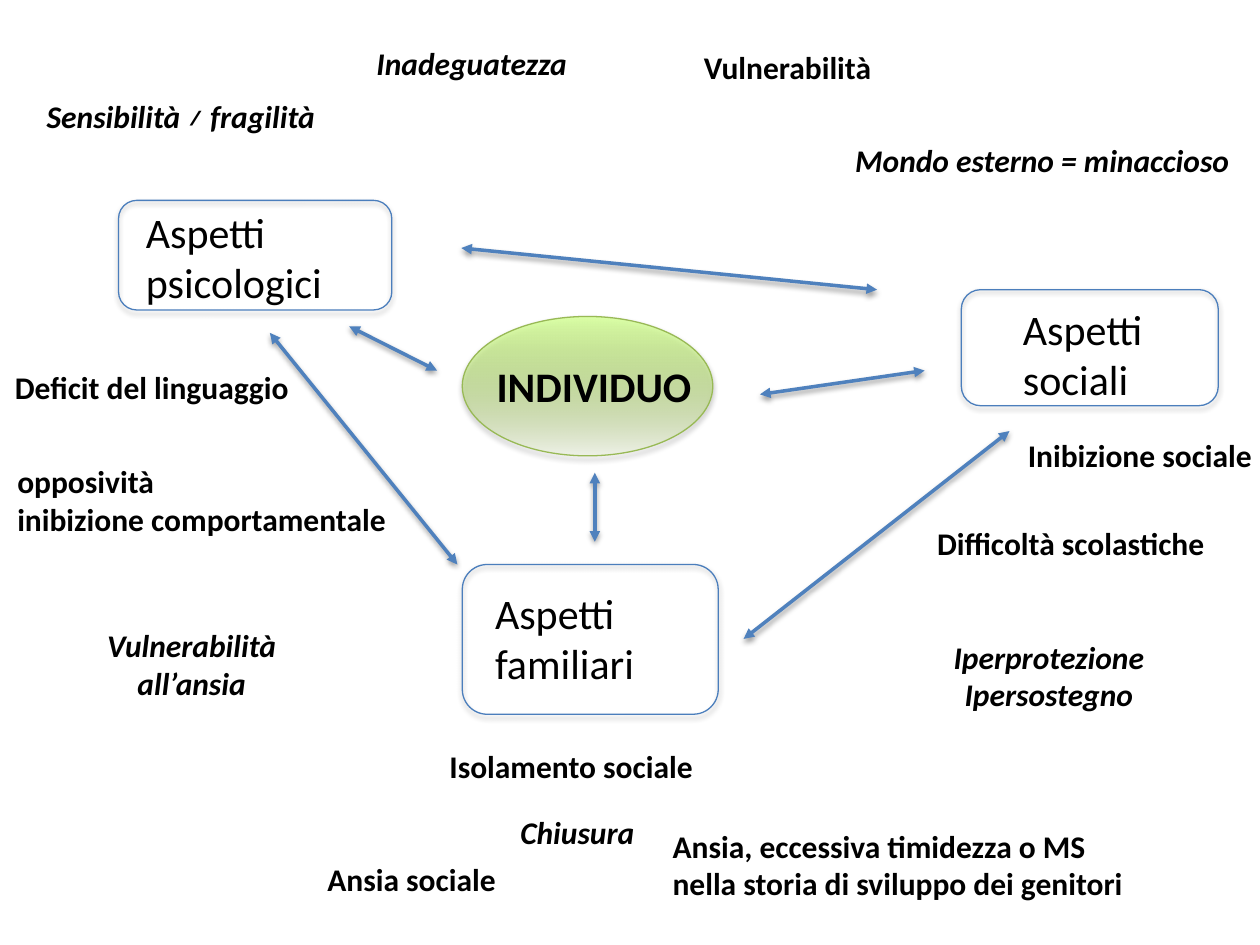
import pptx
import pptx.util
import pptx.dml.color
import pptx.enum.shapes
import pptx.enum.text
import pptx.oxml.ns
import lxml.etree

Cm, Pt = pptx.util.Cm, pptx.util.Pt
KIND = pptx.enum.shapes.MSO_SHAPE
ALIGN = pptx.enum.text.PP_ALIGN
qn = pptx.oxml.ns.qn

COLORS = {"text": "000000", "arrow": "4F81BD", "frame": "4B7EBC",
          "rim": "98B955", "base": "A0CA4A", "top": "DAFFA5"}

PANELS = [
    ("Aspetti psicologici", (2.39, 4.04, 5.51, 2.21), (0.3, 0, 4.9)),
    ("Aspetti sociali", (19.38, 5.84, 5.18, 2.34), (0.99, 0.15, 3.78)),
    ("Aspetti familiari", (9.32, 11.38, 5.16, 3.02), (0.41, 0.33, 4.6)),
]

ARROWS = [
    (7.04, 6.58, 8.81, 7.47), (9.3, 5, 17.68, 5.84),
    (15.32, 7.95, 18.64, 7.47), (14.99, 12.88, 20.35, 8.69),
    (5.44, 6.71, 9.22, 11.38), (11.99, 10.92, 11.99, 9.53),
]

TRAITS = [
    ("Chiusura", (10.24, 16.26, 3.25, 1.02), {"italic": True}),
    ("Vulnerabilità all’ansia", (1.73, 12.5, 4.27, 1.8),
     {"italic": True, "align": ALIGN.CENTER}),
    ("Iperprotezione\nIpersostegno", (18.92, 12.73, 4.45, 1.8),
     {"italic": True, "align": ALIGN.CENTER}),
    ("Sensibilità ≠ fragilità", (0.69, 1.83, 6.43, 1.02), {"italic": True}),
    ("Mondo esterno = minaccioso", (16.99, 2.72, 8.41, 1.02), {"italic": True}),
    ("Inadeguatezza", (7.34, 0.76, 4.95, 1.02), {"italic": True}),
    ("opposività\ninibizione comportamentale", (0.1, 9.19, 8.92, 1.8), {}),
    ("Vulnerabilità", (13.94, 0.84, 10.62, 1.02), {}),
    ("Isolamento sociale", (8.81, 14.94, 5.69, 1.02), {}),
    ("Ansia sociale", (6.35, 17.22, 4.65, 1.02), {}),
    ("Ansia, eccessiva timidezza o MS nella storia di sviluppo dei genitori",
     (13.31, 16.54, 9.88, 1.8), {}),
    ("Deficit del linguaggio", (0.05, 7.29, 7.06, 1.02), {}),
    ("Inibizione sociale", (20.47, 8.66, 5.05, 1.02), {}),
    ("Difficoltà scolastiche", (18.64, 10.44, 5.92, 1.02), {}),
]


def tint(name):
    """Return the named colour."""
    return pptx.dml.color.RGBColor.from_string(COLORS[name])


def child(node, tag, **attrs):
    """Add a DrawingML element under a node."""
    return lxml.etree.SubElement(node, qn(tag), attrs)


def shade(props, dist, alpha):
    """Give shape properties a soft shadow that falls straight down."""
    effects = props.find(qn("a:effectLst"))
    if effects is None:
        effects = child(props, "a:effectLst")
    outer = child(effects, "a:outerShdw", blurRad=str(Pt(3.1)),
                  dist=str(Pt(dist)), dir="5400000", rotWithShape="0")
    color = child(outer, "a:srgbClr", val="000000")
    child(color, "a:alpha", val=str(alpha * 1000))


def write(slide, text, box, size=18, bold=True, italic=False, align=ALIGN.LEFT):
    """Place wrapped text in a box, one paragraph to a line."""
    frame = slide.shapes.add_textbox(*map(Cm, box)).text_frame
    frame.word_wrap = True
    frame.text = text
    for para in frame.paragraphs:
        para.alignment = align
        font = para.font
        font.name, font.size = "Calibri", Pt(size)
        font.bold, font.italic = bold, italic
        font.color.rgb = tint("text")


def outline(slide, kind, box, color):
    """Draw an unfilled shape with a thin line and a shadow."""
    shape = slide.shapes.add_shape(kind, *map(Cm, box))
    shape.fill.background()
    shape.line.color.rgb = tint(color)
    shape.line.width = Pt(0.75)
    shape.shadow.inherit = False
    shade(shape._element.spPr, 1.8, 35)
    return shape


def center(slide, box):
    """Draw the central ellipse with its label."""
    left, top, width, height = box
    shape = outline(slide, KIND.OVAL, box, "rim")
    shape.fill.gradient()
    shape.fill.gradient_angle = 90
    for stop, name in zip(shape.fill.gradient_stops, ("base", "top")):
        stop.color.rgb = tint(name)
    base = shape._element.spPr.find(".//" + qn("a:gs")).find(qn("a:srgbClr"))
    child(base, "a:alpha", val="8000")
    write(slide, "INDIVIDUO", (left - 3.48, top + 0.76, 12.27, 1.27),
          size=24, align=ALIGN.CENTER)


def panel(slide, text, box, inset):
    """Draw a rounded frame with its heading set in by the inset."""
    left, top, width, height = box
    right, down, wide = inset
    outline(slide, KIND.ROUNDED_RECTANGLE, box, "frame")
    write(slide, text, (left + right, top + down, wide, 2.31),
          size=24, bold=False)


def arrow(slide, ends):
    """Draw a double-headed arrow."""
    line = slide.shapes.add_connector(
        pptx.enum.shapes.MSO_CONNECTOR.STRAIGHT, *map(Cm, ends))
    line.line.color.rgb = tint("arrow")
    line.line.width = Pt(2)
    props = line._element.spPr
    for tag in ("a:headEnd", "a:tailEnd"):
        child(props.find(qn("a:ln")), tag, type="triangle")
    shade(props, 1.6, 38)


def main():
    """Build and save the slide."""
    deck = pptx.Presentation()
    deck.slide_width, deck.slide_height = Cm(25.4), Cm(19.05)
    slide = deck.slides.add_slide(deck.slide_layouts[6])
    center(slide, (9.32, 6.38, 5.05, 2.81))
    for ends in ARROWS:
        arrow(slide, ends)
    for text, box, inset in PANELS:
        panel(slide, text, box, inset)
    for text, box, style in TRAITS:
        write(slide, text, box, **style)
    deck.save("out.pptx")


if __name__ == "__main__":
    main()
